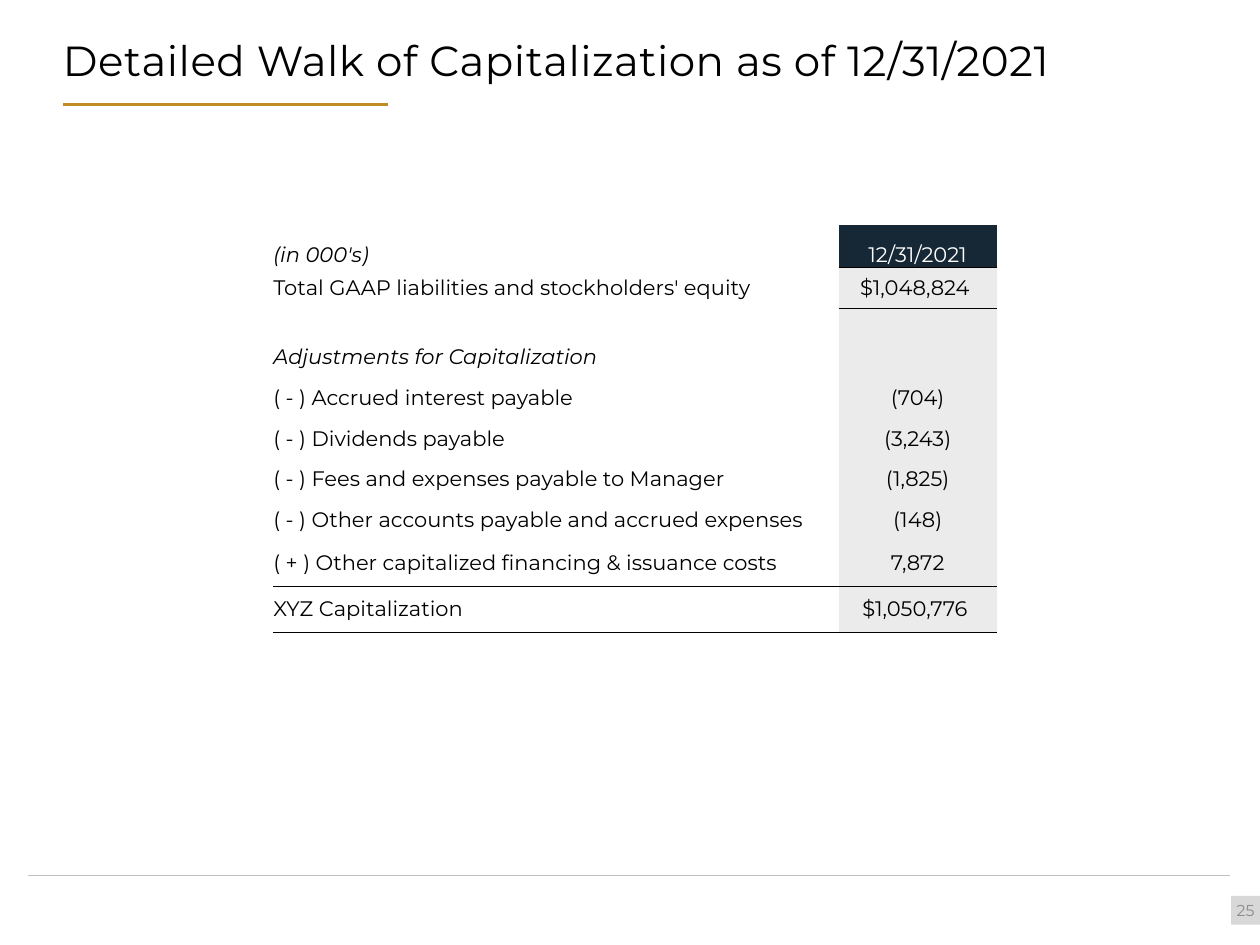
from lxml import etree
from pptx import Presentation
from pptx import util as u
from pptx.dml.color import RGBColor
from pptx.enum import shapes, text
from pptx.oxml import ns

FONT = "Montserrat"


def color(value):
    return RGBColor.from_string(value)


def write(para, words, size, ink, **formats):
    span = para.add_run()
    span.text = words
    formats = {"name": FONT, "size": u.Pt(size), **formats}
    for key, value in formats.items():
        setattr(span.font, key, value)
    span.font.color.rgb = color(ink)
    return span


deck = Presentation()
deck.slide_width, deck.slide_height = u.Cm(25.4), u.Cm(19.05)
page = deck.slides.add_slide(deck.slide_layouts[6])

# Footer rule and title underline
for left, right, top, ink, width in [
    (0.56, 24.79, 17.65, "C2C2C2", 0.5),
    (1.27, 7.82, 2.11, "C08B22", 1.5),
]:
    rule = page.shapes.add_connector(
        shapes.MSO_CONNECTOR.STRAIGHT, u.Cm(left), u.Cm(top), u.Cm(right), u.Cm(top))
    rule.line.color.rgb = color(ink)
    rule.line.width = u.Pt(width)
    etree.SubElement(rule._element.spPr, ns.qn("a:effectLst"))

# Title
title = page.shapes.add_textbox(u.Cm(1.27), u.Cm(0.53), u.Cm(20.96), u.Cm(2.16))
title.text_frame.word_wrap = True
title.text_frame.margin_left = 0
para = title.text_frame.paragraphs[0]
para.line_spacing = u.Pt(30)
span = write(para, "Detailed Walk of Capitalization as of 12/31/2021", 24, "020000")
span._r.get_or_add_rPr().set("spc", "30")

# Page number
badge = page.shapes.add_shape(
    shapes.MSO_SHAPE.RECTANGLE, u.Cm(24.82), u.Cm(18.06), u.Cm(0.58), u.Cm(0.58))
badge.shadow.inherit = False
badge.fill.solid()
badge.fill.fore_color.rgb = color("D8D8D8")
badge.line.fill.background()
frame = badge.text_frame
for side in ("left", "right", "top", "bottom"):
    setattr(frame, f"margin_{side}", 0)
frame.vertical_anchor = text.MSO_ANCHOR.MIDDLE
frame.paragraphs[0].alignment = text.PP_ALIGN.CENTER
write(frame.paragraphs[0], "25", 9, "8C8C8C")

# Capitalization table: label, amount, row height
rows = [
    ("(in 000's)", "12/31/2021", 0.86),
    ("Total GAAP liabilities and stockholders' equity", "$1,048,824 ", 0.82),
    ("", "", 0.57),
    ("Adjustments for Capitalization", "", 0.82),
    ("( - ) Accrued interest payable", "(704)", 0.82),
    ("( - ) Dividends payable", "(3,243)", 0.82),
    ("( - ) Fees and expenses payable to Manager", "(1,825)", 0.82),
    ("( - ) Other accounts payable and accrued expenses", "(148)", 0.82),
    ("( + ) Other capitalized financing & issuance costs", "7,872", 0.93),
    ("XYZ Capitalization", "$1,050,776 ", 0.93),
]
italic_rows = (0, 3)
# Borders by (row, column): edge, colour, width in points
borders = {
    (0, 1): [("B", "000000", 0.5)],
    (1, 1): [("T", "000000", 0.5)],
}
for column in (0, 1):
    borders[8, column] = [("B", "020000", 1)]
    borders[9, column] = [("T", "020000", 1), ("B", "020000", 1)]

holder = page.shapes.add_table(
    len(rows), 2, u.Cm(5.51), u.Cm(4.54), u.Cm(14.58), u.Cm(sum(row[2] for row in rows)))
table = holder.table
table.first_row = table.horz_banding = False
# Plain style without grid lines
table._tbl.tblPr.find(ns.qn("a:tableStyleId")).text = "{2D5ABB26-0587-4C30-8999-92F81FD0307C}"
table.columns[0].width, table.columns[1].width = u.Cm(11.4), u.Cm(3.18)

for r, (label, amount, height) in enumerate(rows):
    table.rows[r].height = u.Cm(height)
    for c, words in enumerate((label, amount)):
        cell = table.cell(r, c)
        for side in ("left", "right", "top", "bottom"):
            setattr(cell, f"margin_{side}", 0)
        cell.vertical_anchor = text.MSO_ANCHOR.MIDDLE if r else text.MSO_ANCHOR.BOTTOM
        if c:
            cell.fill.solid()
            cell.fill.fore_color.rgb = color("EBEBEB" if r else "162835")
        else:
            cell.fill.background()

        para = cell.text_frame.paragraphs[0]
        para.alignment = text.PP_ALIGN.CENTER if c else text.PP_ALIGN.LEFT
        if words:
            ink = "FFFFFF" if c and not r else "000000"
            write(para, words, 12, ink, italic=not c and r in italic_rows)
        else:
            para._p.get_or_add_endParaRPr().set("sz", "1200")

        # Edges stand before the fill, top before bottom
        props = cell._tc.get_or_add_tcPr()
        for place, (edge, ink, width) in enumerate(borders.get((r, c), [])):
            line = etree.Element(ns.qn(f"a:ln{edge}"), w=str(u.Pt(width)))
            fill = etree.SubElement(line, ns.qn("a:solidFill"))
            etree.SubElement(fill, ns.qn("a:srgbClr"), val=ink)
            props.insert(place, line)

deck.save("out.pptx")
